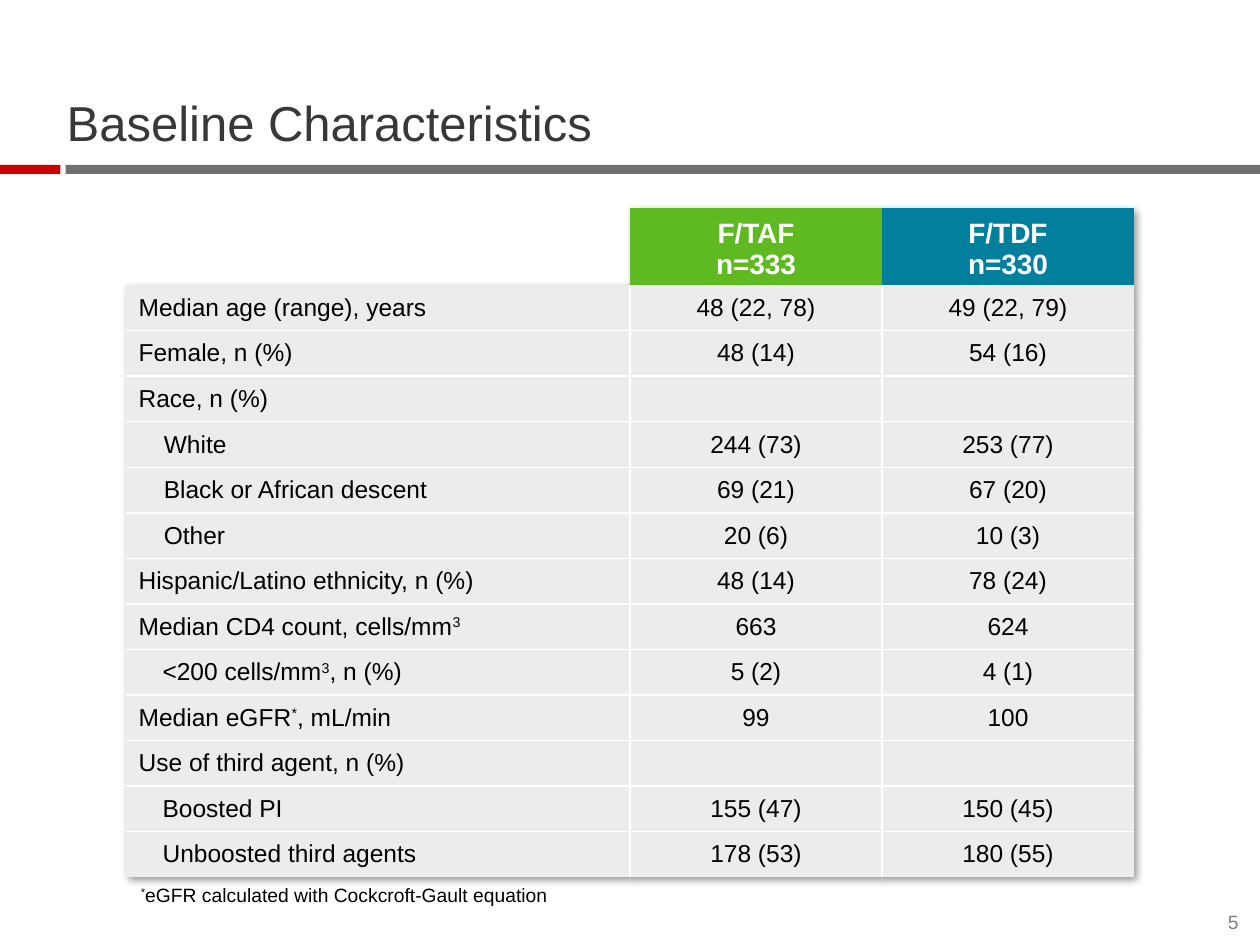
from dataclasses import dataclass

from lxml.etree import SubElement
from pptx import Presentation
from pptx.dml.color import RGBColor
from pptx.enum.shapes import MSO_SHAPE as Shape
from pptx.enum.text import MSO_ANCHOR as Anchor, PP_ALIGN as Align
from pptx.oxml import parse_xml
from pptx.oxml.ns import nsdecls, qn
from pptx.util import Inches, Pt


@dataclass(frozen=True)
class Theme:
    font: str = "Arial"
    title: str = "383838"
    rule: str = "717171"
    accent: str = "CC0000"
    taf: str = "5EBA20"
    tdf: str = "027F9C"
    body: str = "ECECEC"
    white: str = "FFFFFF"
    text: str = "000000"
    page: str = "7F7F7F"
    title_size: int = 28
    header_size: int = 16
    body_size: int = 14
    note_size: int = 11


THEME = Theme()
NO_STYLE = "{2D5ABB26-0587-4C30-8999-92F81FD0307C}"

# Text between carets is superscript; the middle number is the indent in inches.
HEADERS = [("F/TAF\nn=333", THEME.taf), ("F/TDF\nn=330", THEME.tdf)]
ROWS = [
    ("Median age (range), years", 0, "48 (22, 78)", "49 (22, 79)"),
    ("Female, n (%)", 0, "48 (14)", "54 (16)"),
    ("Race, n (%)", 0, "", ""),
    ("White", 0.2, "244 (73)", "253 (77)"),
    ("Black or African descent", 0.2, "69 (21)", "67 (20)"),
    ("Other", 0.2, "20 (6)", "10 (3)"),
    ("Hispanic/Latino ethnicity, n (%)", 0, "48 (14)", "78 (24)"),
    ("Median CD4 count, cells/mm^3^", 0, "663", "624"),
    ("<200 cells/mm^3^, n (%)", 0.19, "5 (2)", "4 (1)"),
    ("Median eGFR^*^, mL/min", 0, "99", "100"),
    ("Use of third agent, n (%)", 0, "", ""),
    ("Boosted PI", 0.19, "155 (47)", "150 (45)"),
    ("Unboosted third agents", 0.19, "178 (53)", "180 (55)"),
]


def write(frame, text, *, size, color=THEME.text, bold=False,
          align=Align.LEFT, indent=0, spacing=None):
    """Fill a text frame, one paragraph per line."""
    for number, line in enumerate(text.split("\n")):
        paragraph = frame.paragraphs[0] if number == 0 else frame.add_paragraph()
        paragraph.alignment = align
        if spacing:
            paragraph.line_spacing = spacing
        if indent:
            paragraph._p.get_or_add_pPr().set("marL", str(Inches(indent)))
        if not line:
            # An empty cell needs its type size too, or its row grows
            SubElement(paragraph._p, qn("a:endParaRPr")).set("sz", str(size * 100))
        for position, part in enumerate(line.split("^")):
            if not part:
                continue
            run = paragraph.add_run()
            run.text = part
            run.font.name = THEME.font
            run.font.size = Pt(size)
            run.font.bold = bold
            run.font.color.rgb = RGBColor.from_string(color)
            if position % 2:
                run._r.get_or_add_rPr().set("baseline", "30000")


class SlideBuilder:
    def __init__(self, slide, theme):
        self.slide = slide
        self.theme = theme

    def bar(self, left, top, width, height, color):
        bar = self.slide.shapes.add_shape(
            Shape.RECTANGLE, Inches(left), Inches(top), Inches(width), Inches(height))
        bar.shadow.inherit = False
        bar.fill.solid()
        bar.fill.fore_color.rgb = RGBColor.from_string(color)
        bar.line.fill.background()

    def text(self, left, top, width, height, text, *, wrap=True,
             anchor=Anchor.BOTTOM, margins=(0, 0), **style):
        box = self.slide.shapes.add_textbox(
            Inches(left), Inches(top), Inches(width), Inches(height))
        frame = box.text_frame
        frame.word_wrap = wrap
        frame.vertical_anchor = anchor
        frame.margin_left = frame.margin_right = Inches(margins[0])
        frame.margin_top = frame.margin_bottom = Inches(margins[1])
        write(frame, text, **style)

    def cell(self, cell, text, fill, *, anchor=Anchor.MIDDLE,
             margins=(0.1, 0.05), borders=(), **style):
        cell.vertical_anchor = anchor
        cell.margin_left = cell.margin_right = Inches(margins[0])
        cell.margin_top = cell.margin_bottom = Inches(margins[1])
        write(cell.text_frame, text, **style)
        properties = cell._tc.get_or_add_tcPr()
        for side in borders:
            properties.append(parse_xml(
                f'<a:ln{side} {nsdecls("a")} w="{Pt(1)}"><a:solidFill>'
                f'<a:srgbClr val="{self.theme.white}"/></a:solidFill></a:ln{side}>'))
        cell.fill.solid()
        cell.fill.fore_color.rgb = RGBColor.from_string(fill)

    def table(self, left, top, widths, header_height, row_height, headers, rows):
        theme = self.theme
        height = header_height + row_height * len(rows)
        table = self.slide.shapes.add_table(
            len(rows) + 1, len(widths), Inches(left), Inches(top),
            Inches(sum(widths)), Inches(height)).table
        table.horz_banding = False
        properties = table._tbl.tblPr
        properties.find(qn("a:tableStyleId")).text = NO_STYLE
        properties.insert(0, parse_xml(
            f'<a:effectLst {nsdecls("a")}><a:outerShdw blurRad="50800" dist="38100" '
            'dir="2700000" algn="tl" rotWithShape="0"><a:srgbClr val="000000">'
            '<a:alpha val="40000"/></a:srgbClr></a:outerShdw></a:effectLst>'))
        for column, width in zip(table.columns, widths):
            column.width = Inches(width)
        for number, row in enumerate(table.rows):
            row.height = Inches(row_height if number else header_height)

        # Header row, its first cell left clear
        for column, (label, color) in enumerate(headers, start=1):
            self.cell(table.cell(0, column), label, color, anchor=Anchor.BOTTOM,
                      margins=(0.05, 0.04), size=theme.header_size,
                      color=theme.white, bold=True, align=Align.CENTER)

        # Body rows, with white lines on inner edges only
        for number, (label, indent, *values) in enumerate(rows, start=1):
            for column, text in enumerate([label, *values]):
                inner = {"L": column > 0, "R": column < len(values),
                         "T": number > 1, "B": number < len(rows)}
                self.cell(table.cell(number, column), text, theme.body,
                          borders=[side for side, drawn in inner.items() if drawn],
                          size=theme.body_size,
                          indent=0 if column else indent,
                          align=Align.CENTER if column else Align.LEFT)


def main():
    deck = Presentation()
    deck.slide_width, deck.slide_height = Inches(10), Inches(7.5)
    builder = SlideBuilder(deck.slides.add_slide(deck.slide_layouts[6]), THEME)

    # Title and the rule below it
    builder.bar(0.52, 1.31, 9.48, 0.07, THEME.rule)
    builder.bar(0, 1.31, 0.48, 0.07, THEME.accent)
    builder.text(0.53, 0.47, 9, 0.74, "Baseline Characteristics",
                 size=THEME.title_size, color=THEME.title, spacing=0.9)

    # Characteristics by treatment arm
    builder.table(1, 1.65, (4, 2, 2), 0.61, 4.7 / len(ROWS), HEADERS, ROWS)

    # Page number and footnote
    builder.text(9.56, 7.23, 0.27, 0.18, "5", size=THEME.note_size,
                 color=THEME.page, align=Align.RIGHT)
    builder.text(1.02, 6.96, 3.45, 0.29,
                 "^*^eGFR calculated with Cockcroft-Gault equation",
                 wrap=False, anchor=Anchor.TOP, margins=(0.1, 0.05),
                 size=THEME.note_size)

    deck.save("out.pptx")


if __name__ == "__main__":
    main()
